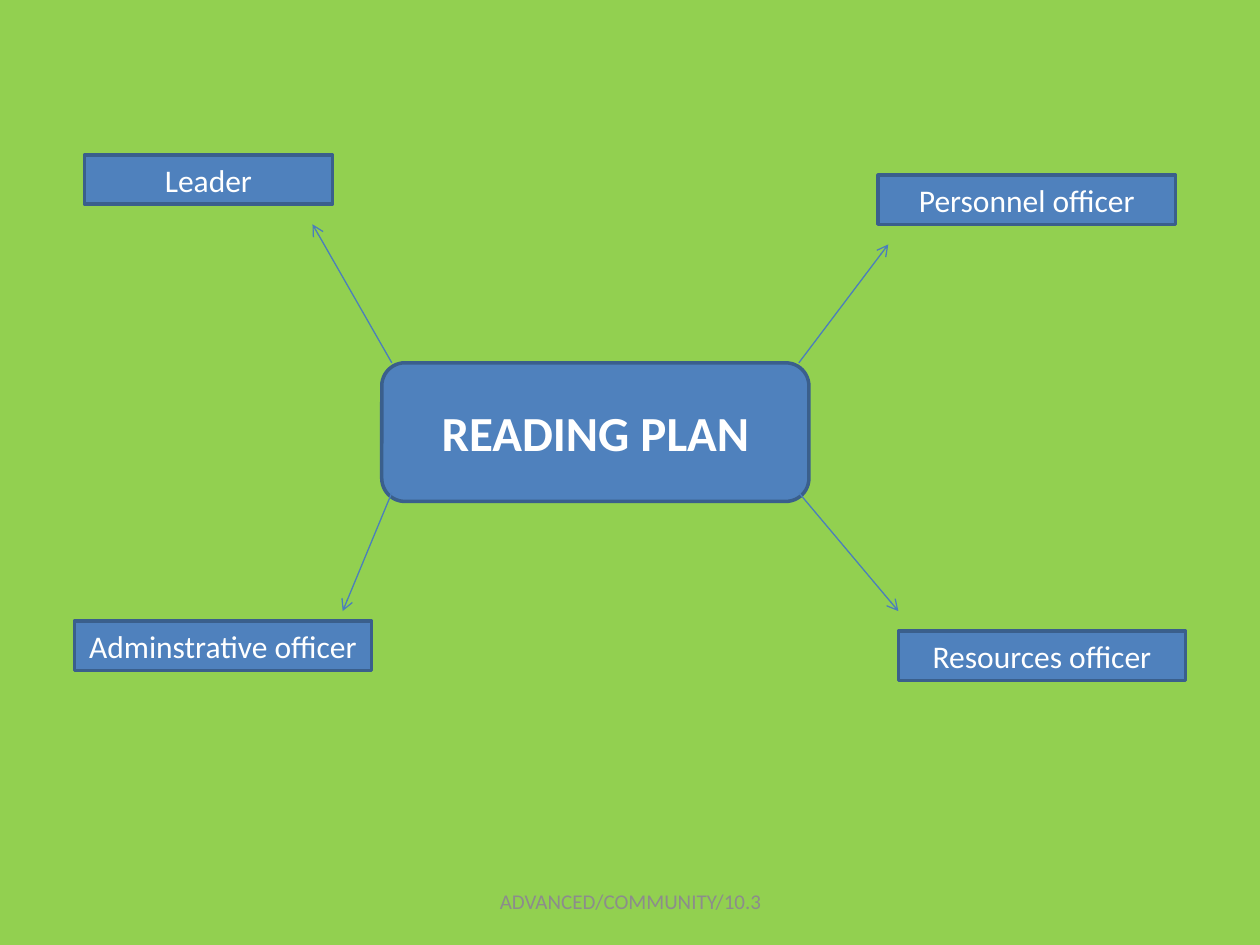
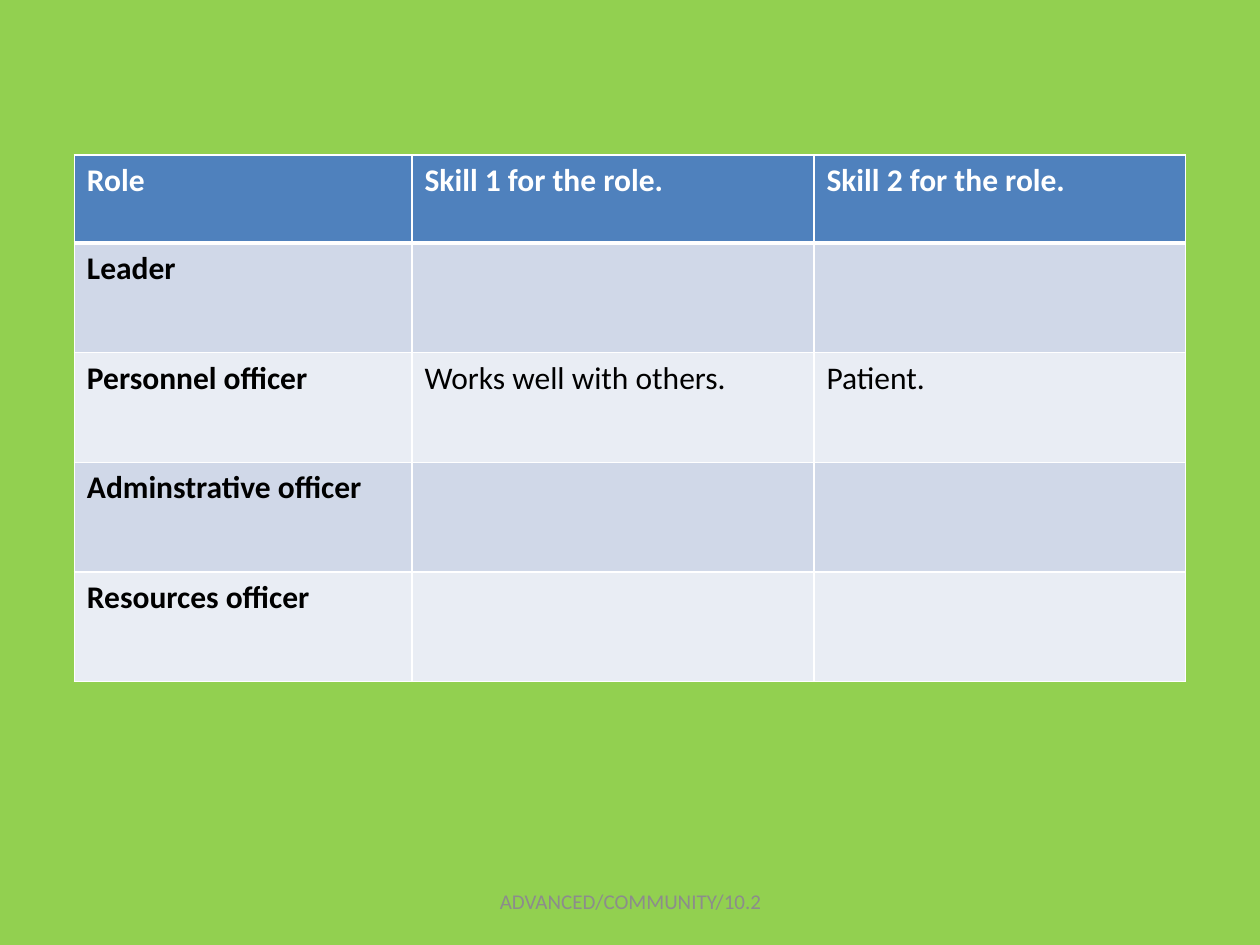
from lxml.etree import SubElement
from pptx import Presentation
from pptx.dml.color import RGBColor
from pptx.enum.shapes import MSO_CONNECTOR, MSO_SHAPE
from pptx.enum.text import MSO_ANCHOR, PP_ALIGN
from pptx.oxml.ns import qn
from pptx.util import Inches, Pt

COLORS = {
    "background": "92D050",
    "blue": "4F81BD",
    "outline": "3A5F8C",
    "arrow": "4B7EBC",
    "footer": "8C8C8C",
    "dark band": "D0D8E8",
    "light band": "E9EDF4",
    "white": "FFFFFF",
    "black": "000000",
}
FONT = "Calibri"


def add_text(frame, text, size, color, bold=False, align=PP_ALIGN.CENTER):
    para = frame.paragraphs[0]
    para.alignment = align
    span = para.add_run()
    span.text = text
    span.font.name = FONT
    span.font.size = Pt(size)
    span.font.bold = bold
    span.font.color.rgb = RGBColor.from_string(COLORS[color])


def add_page(deck, footer):
    page = deck.slides.add_slide(deck.slide_layouts[6])
    page.background.fill.solid()
    page.background.fill.fore_color.rgb = RGBColor.from_string(COLORS["background"])
    box = page.shapes.add_textbox(Inches(3.42), Inches(6.95), Inches(3.17), Inches(0.4))
    box.text_frame.word_wrap = True
    box.text_frame.vertical_anchor = MSO_ANCHOR.MIDDLE
    add_text(box.text_frame, footer, 12, "footer")
    return page


deck = Presentation()
deck.slide_width = Inches(10)
deck.slide_height = Inches(7.5)

plan_page = add_page(deck, "ADVANCED/COMMUNITY/10.3")
boxes = [
    ("READING PLAN", MSO_SHAPE.ROUNDED_RECTANGLE, 3.03, 2.88, 3.39, 1.1, 28, True),
    ("Leader", MSO_SHAPE.RECTANGLE, 0.67, 1.23, 1.97, 0.39, 18, False),
    ("Personnel officer", MSO_SHAPE.RECTANGLE, 6.97, 1.39, 2.36, 0.39, 18, False),
    ("Resources officer", MSO_SHAPE.RECTANGLE, 7.13, 5.01, 2.28, 0.39, 18, False),
    ("Adminstrative officer", MSO_SHAPE.RECTANGLE, 0.59, 4.93, 2.36, 0.39, 18, False),
]
for text, preset, left, top, width, height, size, bold in boxes:
    box = plan_page.shapes.add_shape(
        preset, Inches(left), Inches(top), Inches(width), Inches(height)
    )
    box.shadow.inherit = False
    box.fill.solid()
    box.fill.fore_color.rgb = RGBColor.from_string(COLORS["blue"])
    box.line.color.rgb = RGBColor.from_string(COLORS["outline"])
    box.line.width = Pt(2)
    box.text_frame.word_wrap = True
    box.text_frame.vertical_anchor = MSO_ANCHOR.MIDDLE
    add_text(box.text_frame, text, size, "white", bold)

arrows = [
    (3.11, 2.88, 2.48, 1.78),
    (6.34, 2.88, 7.05, 1.94),
    (3.11, 3.91, 2.72, 4.85),
    (6.34, 3.91, 7.13, 4.85),
]
for ends in arrows:
    arrow = plan_page.shapes.add_connector(
        MSO_CONNECTOR.STRAIGHT, *[Inches(value) for value in ends]
    )
    arrow.line.color.rgb = RGBColor.from_string(COLORS["arrow"])
    arrow.line.width = Pt(0.75)
    SubElement(arrow.line._get_or_add_ln(), qn("a:tailEnd"), type="arrow")
    SubElement(arrow._element.spPr, qn("a:effectLst"))

skills_page = add_page(deck, "ADVANCED/COMMUNITY/10.2")
skills = [
    ("Role", "Skill 1 for the role.", "Skill 2 for the role."),
    ("Leader", "", ""),
    ("Personnel officer", "Works well with others.", "Patient."),
    ("Adminstrative officer", "", ""),
    ("Resources officer", "", ""),
]
table = skills_page.shapes.add_table(
    5, 3, Inches(0.59), Inches(1.23), Inches(8.82), Inches(4.18)
).table
for column, width in zip(table.columns, (2.68, 3.19, 2.95)):
    column.width = Inches(width)
for row_index, texts in enumerate(skills):
    is_header = row_index == 0
    table.rows[row_index].height = Inches(0.7 if is_header else 0.87)
    band = "blue" if is_header else ("light band", "dark band")[row_index % 2]
    for column_index, text in enumerate(texts):
        cell = table.cell(row_index, column_index)
        if text:
            add_text(
                cell.text_frame, text, 18, "white" if is_header else "black",
                is_header or column_index == 0, PP_ALIGN.LEFT,
            )
        properties = cell._tc.get_or_add_tcPr()
        for side in ("lnL", "lnR", "lnT", "lnB"):
            under_header = (row_index, side) in ((0, "lnB"), (1, "lnT"))
            border = SubElement(
                properties, qn(f"a:{side}"), w=str(Pt(3 if under_header else 1))
            )
            fill = SubElement(border, qn("a:solidFill"))
            SubElement(fill, qn("a:srgbClr"), val=COLORS["white"])
        cell.fill.solid()
        cell.fill.fore_color.rgb = RGBColor.from_string(COLORS[band])

deck.save("out.pptx")
